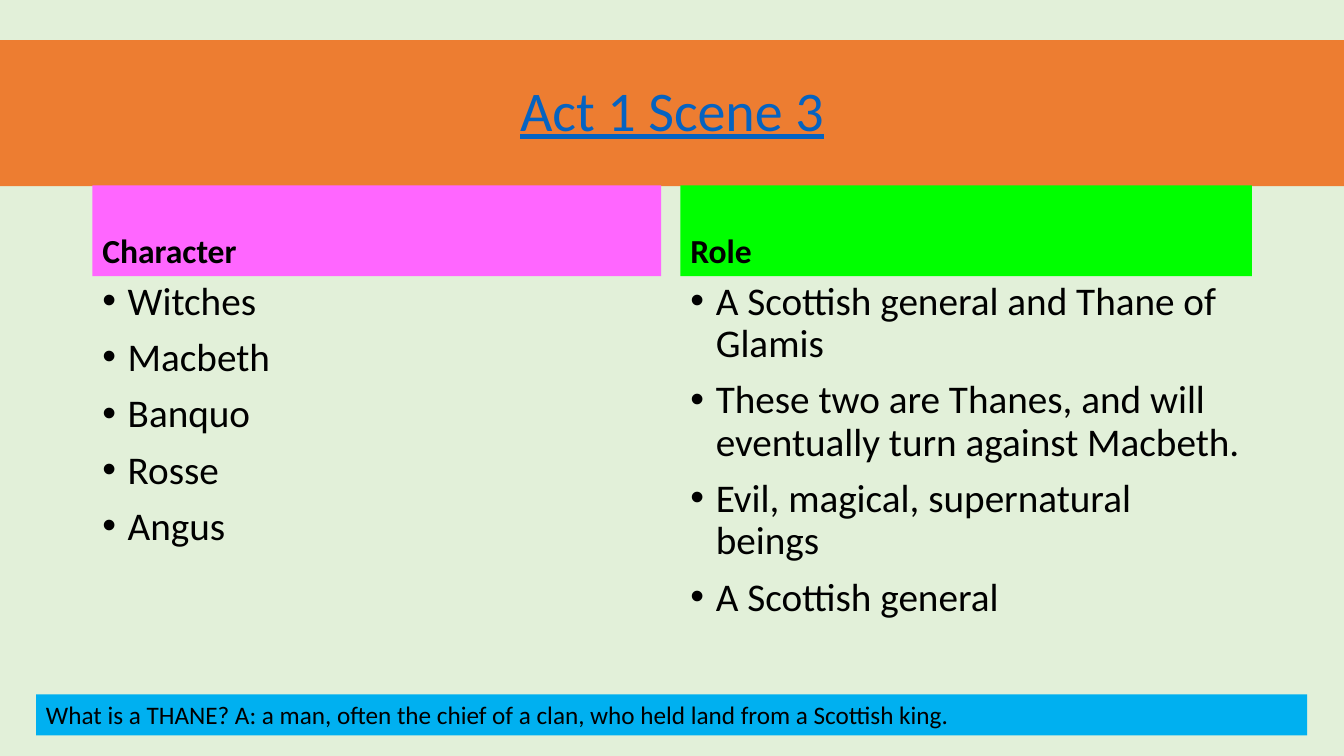
import pptx
import pptx.util
import pptx.dml.color
import pptx.enum.text
import lxml.etree

Cm = pptx.util.Cm
Pt = pptx.util.Pt
Align = pptx.enum.text.PP_ALIGN
Anchor = pptx.enum.text.MSO_ANCHOR

theme = {
    "font": "Calibri",
    "back": "E2F0D9", "band": "ED7D31", "link": "0563C1", "ink": "000000",
    "pink": "FF66FF", "green": "00FF00", "blue": "00B0F0",
    "title": 40, "head": 24, "list": 28, "note": 18,
}


def color(name):
    return pptx.dml.color.RGBColor.from_string(theme[name])


def add_block(slide, place, lines, size, fill=None, ink="ink", anchor=Anchor.TOP,
              font=None, para=None, dots=False):
    box = slide.shapes.add_textbox(*[Cm(n) for n in place])
    if fill:
        box.fill.solid()
        box.fill.fore_color.rgb = color(fill)
    frame = box.text_frame
    frame.word_wrap = True
    frame.vertical_anchor = anchor
    frame.text = "\n".join(lines)
    for item in frame.paragraphs:
        for key, value in (para or {}).items():
            setattr(item, key, value)
        face = item.runs[0].font
        face.color.rgb = color(ink)
        look = {"name": theme["font"], "size": Pt(theme[size]), **(font or {})}
        for key, value in look.items():
            setattr(face, key, value)
        if dots:
            props = item._p.get_or_add_pPr()
            props.set("marL", str(Cm(0.64)))
            props.set("indent", str(-Cm(0.64)))
            space = "{http://schemas.openxmlformats.org/drawingml/2006/main}"
            lxml.etree.SubElement(props, space + "buFont", typeface="Arial")
            lxml.etree.SubElement(props, space + "buChar", char="•")


deck = pptx.Presentation()
deck.slide_width = Cm(33.87)
deck.slide_height = Cm(19.05)
slide = deck.slides.add_slide(deck.slide_layouts[6])
slide.background.fill.solid()
slide.background.fill.fore_color.rgb = color("back")

add_block(slide, (0, 1.01, 33.87, 3.68), ["Act 1 Scene 3"], "title", "band", "link",
          Anchor.MIDDLE, {"underline": True},
          {"alignment": Align.CENTER, "line_spacing": 0.9})

columns = [
    (2.33, 14.33, "pink", "Character",
     ["Witches", "Macbeth", "Banquo", "Rosse", "Angus"]),
    (17.15, 14.4, "green", "Role",
     ["A Scottish general and Thane of Glamis",
      "These two are Thanes, and will eventually turn against Macbeth.",
      "Evil, magical, supernatural beings",
      "A Scottish general"]),
]
flow = {"line_spacing": 0.9, "space_before": Pt(10)}
for left, width, fill, head, items in columns:
    add_block(slide, (left, 4.67, width, 2.29), [head], "head", fill,
              anchor=Anchor.BOTTOM, font={"bold": True}, para=flow)
    add_block(slide, (left, 6.96, width, 10.24), items, "list", para=flow, dots=True)

add_block(slide, (0.91, 17.5, 32.03, 1.03),
          ["What is a THANE? A: a man, often the chief of a clan, "
           "who held land from a Scottish king."], "note", "blue")

deck.save("out.pptx")
